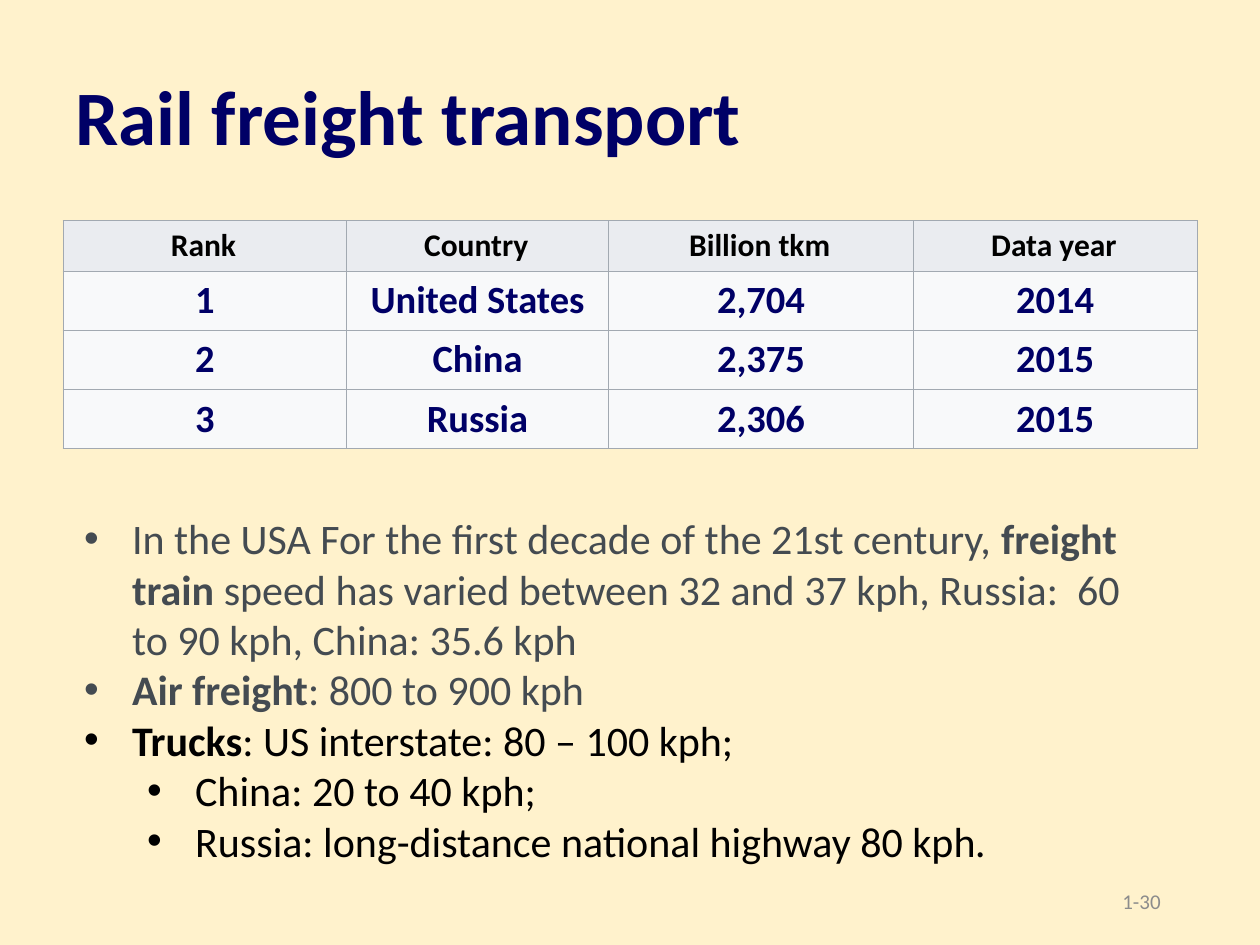
from lxml.etree import SubElement
from pptx import Presentation
from pptx.dml.color import RGBColor
from pptx.enum.text import MSO_ANCHOR, PP_ALIGN
from pptx.oxml import parse_xml
from pptx.oxml.ns import nsdecls, qn
from pptx.util import Inches, Pt

CREAM = RGBColor(0xFF, 0xF2, 0xCC)
NAVY = RGBColor(0x00, 0x00, 0x66)
BLACK = RGBColor(0x00, 0x00, 0x00)
SLATE = RGBColor(0x44, 0x4B, 0x51)
GREY = RGBColor(0x8C, 0x8C, 0x8C)
HEADER_FILL = RGBColor(0xEA, 0xEC, 0xF0)
BODY_FILL = RGBColor(0xF8, 0xF9, 0xFA)
BORDER = RGBColor(0xA2, 0xA9, 0xB1)

FONT = "Calibri"
COLUMN_WIDTHS = (2.25, 2.08, 2.42, 2.25)
RANKING = (
    ("Rank", "Country", "Billion tkm", "Data year"),
    ("1", "United States", "2,704", "2014"),
    ("2", "China", "2,375", "2015"),
    ("3", "Russia", "2,306", "2015"),
)
SPEEDS = (
    (0, SLATE, (
        ("In the USA For the first decade of the 21st century, ", ""),
        ("freight train ", "b"),
        ("speed has varied between 32 and 37 kph, Russia:  60 to 90 kph, China: 35.6 kph", ""),
    )),
    (0, SLATE, (("Air freight", "b"), (": 800 to 900 kph", ""))),
    (0, BLACK, (("Trucks", "b"), (": US interstate: 80 – 100 kph;", ""))),
    (1, BLACK, (("China: 20 to 40 kph;", ""),)),
    (1, BLACK, (("Russia: long-distance national highway 80 kph", ""), (".", "i"))),
)


def style_run(r, size, color, bold=False, italic=False):
    """Apply font, size, colour and weight to a run."""
    r.font.name = FONT
    r.font.size = Pt(size)
    r.font.color.rgb = color
    r.font.bold = bold
    r.font.italic = italic


def set_line(tf, text, size, color, align, bold=False):
    """Fill a text frame with one formatted, vertically centred line."""
    tf.text = text
    tf.vertical_anchor = MSO_ANCHOR.MIDDLE
    p = tf.paragraphs[0]
    p.alignment = align
    style_run(p.runs[0], size, color, bold)


def add_title(s, text):
    """Place and format the slide title."""
    sp = s.shapes.title
    sp.left, sp.top, sp.width, sp.height = map(Inches, (0.5, 0.3, 9, 1.32))
    set_line(sp.text_frame, text, 44, NAVY, PP_ALIGN.LEFT, True)
    sp.text_frame.paragraphs[0].line_spacing = 0.9


def add_textbox(s, left, top, width, height):
    """Add a wrapping text box and return its text frame."""
    tf = s.shapes.add_textbox(*map(Inches, (left, top, width, height))).text_frame
    tf.word_wrap = True
    return tf


def set_borders(cell):
    """Draw a thin line on all four sides of a cell."""
    tcPr = cell._tc.get_or_add_tcPr()
    for i, side in enumerate(("lnL", "lnR", "lnT", "lnB")):
        tcPr.insert(i, parse_xml(
            f'<a:{side} {nsdecls("a")} w="{Pt(0.43)}"><a:solidFill>'
            f'<a:srgbClr val="{BORDER}"/></a:solidFill></a:{side}>'))


def add_ranking(s):
    """Add the table of countries ranked by rail freight."""
    table = s.shapes.add_table(
        len(RANKING), len(COLUMN_WIDTHS),
        Inches(0.5), Inches(1.75), Inches(9), Inches(1.82)).table
    table.horz_banding = False
    for column, width in zip(table.columns, COLUMN_WIDTHS):
        column.width = Inches(width)
    for i, values in enumerate(RANKING):
        header = i == 0
        table.rows[i].height = Inches(0.4 if header else 0.47)
        for j, value in enumerate(values):
            cell = table.cell(i, j)
            set_line(cell.text_frame, value, 18 if header else 22,
                     BLACK if header else NAVY, PP_ALIGN.CENTER, True)
            cell.vertical_anchor = MSO_ANCHOR.MIDDLE
            if header:
                cell.margin_right = Inches(0.12)
            cell.fill.solid()
            cell.fill.fore_color.rgb = HEADER_FILL if header else BODY_FILL
            set_borders(cell)


def set_bullet(p, level):
    """Give a paragraph a hanging round bullet."""
    p.level = level
    pPr = p._p.get_or_add_pPr()
    pPr.set("marL", str(Inches(0.38 + 0.5 * level)))
    pPr.set("indent", str(Inches(-0.38)))
    SubElement(pPr, qn("a:buFont")).set("typeface", "Arial")
    SubElement(pPr, qn("a:buChar")).set("char", "•")


def add_speeds(s):
    """Add the bulleted comparison of freight speeds."""
    tf = add_textbox(s, 0.57, 4.02, 8.75, 2.93)
    for i, (level, color, runs) in enumerate(SPEEDS):
        p = tf.add_paragraph() if i else tf.paragraphs[0]
        set_bullet(p, level)
        for text, style in runs:
            r = p.add_run()
            r.text = text
            style_run(r, 24, color, style == "b", style == "i")


def main():
    """Build and save the slide."""
    prs = Presentation()
    prs.slide_width, prs.slide_height = Inches(10), Inches(7.5)
    s = prs.slides.add_slide(prs.slide_layouts[5])
    s.background.fill.solid()
    s.background.fill.fore_color.rgb = CREAM
    add_title(s, "Rail freight transport")
    set_line(add_textbox(s, 7.06, 6.95, 2.25, 0.4), "1-30", 12, GREY, PP_ALIGN.RIGHT)
    add_ranking(s)
    add_speeds(s)
    prs.save("out.pptx")


if __name__ == "__main__":
    main()
